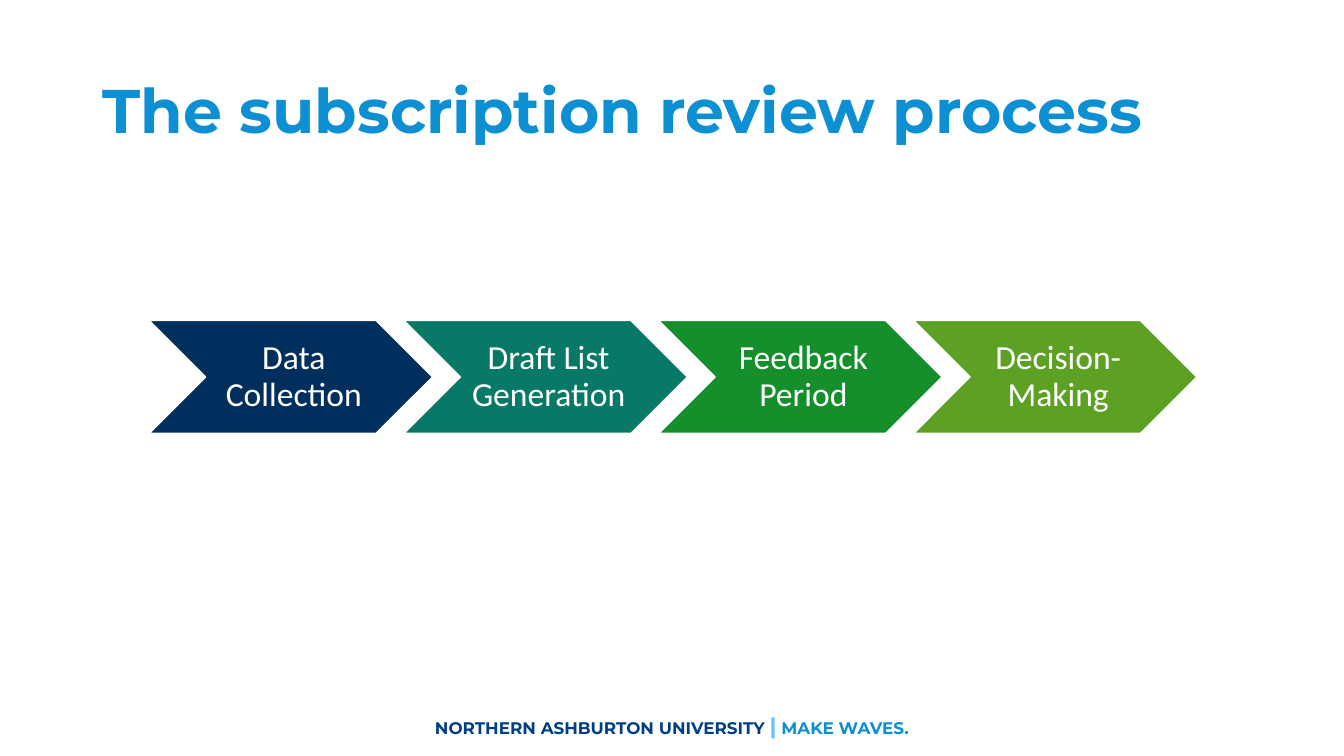
"""Build the subscription review process slide."""
from pptx import Presentation, util as u
from pptx.dml.color import RGBColor
from pptx.enum import shapes, text

W, H = 13.33, 7.5
STEP_LEFT, STEP_TOP, STEP_PITCH = 1.48, 3.18, 2.527
STEP_W, STEP_H = 2.81, 1.12
STEPS = [
    ("Data Collection", "002F5E"),
    ("Draft List Generation", "087967"),
    ("Feedback Period", "148F2C"),
    ("Decision-Making", "5DA124"),
]
FOOTER = [
    ("NORTHERN ASHBURTON UNIVERSITY ", 12, "003F87"),
    ("|", 16, "63C2FF"),
    (" ", 12, "003F87"),
    ("MAKE WAVES.", 12, "0C8FD3"),
]


def color(value):
    """Return the colour for a hex string."""
    return RGBColor.from_string(value)


def box(*lengths):
    """Convert left, top, width and height from inches."""
    return [u.Inches(n) for n in lengths]


def add_text(s, at, runs, font, bold=False, align=text.PP_ALIGN.LEFT,
             spacing=1.0, insets=(0.1, 0.05, 0.1, 0.05)):
    """Add a wrapped, vertically centred paragraph of styled runs."""
    tf = s.shapes.add_textbox(*box(*at)).text_frame
    sides = ("margin_left", "margin_top", "margin_right", "margin_bottom")
    frame = {"word_wrap": True, "vertical_anchor": text.MSO_ANCHOR.MIDDLE,
             **dict(zip(sides, box(*insets)))}
    for name, value in frame.items():
        setattr(tf, name, value)
    p = tf.paragraphs[0]
    p.alignment, p.line_spacing = align, spacing
    for words, size, hue in runs:
        r = p.add_run()
        r.text = words
        for name, value in {"name": font, "size": u.Pt(size), "bold": bold}.items():
            setattr(r.font, name, value)
        r.font.color.rgb = color(hue)


def add_step(s, index, label, fill):
    """Add one chevron of the process with its label."""
    left = STEP_LEFT + index * STEP_PITCH
    sp = s.shapes.add_shape(shapes.MSO_SHAPE.CHEVRON,
                            *box(left, STEP_TOP, STEP_W, STEP_H))
    sp.shadow.inherit = False
    sp.fill.solid()
    sp.fill.fore_color.rgb = color(fill)
    sp.line.color.rgb = color("FFFFFF")
    sp.line.width = u.Pt(1)
    add_text(s, (left + STEP_H / 2, STEP_TOP, STEP_W - STEP_H, STEP_H),
             [(label, 24, "FFFFFF")], "Calibri", align=text.PP_ALIGN.CENTER,
             spacing=0.9, insets=(0.1, 0.04, 0.04, 0.04))


def main():
    """Build and save the slide."""
    prs = Presentation()
    prs.slide_width, prs.slide_height = u.Inches(W), u.Inches(H)
    s = prs.slides.add_slide(prs.slide_layouts[6])
    add_text(s, (0.92, 0.4, 11.5, 1.45),
             [("The subscription review process", 44, "0C8FD3")],
             "Montserrat", bold=True, spacing=0.9)
    add_text(s, (0, 7, W, 0.4), FOOTER, "Montserrat", bold=True,
             align=text.PP_ALIGN.CENTER)
    for index, (label, fill) in enumerate(STEPS):
        add_step(s, index, label, fill)
    prs.save("out.pptx")


if __name__ == "__main__":
    main()
